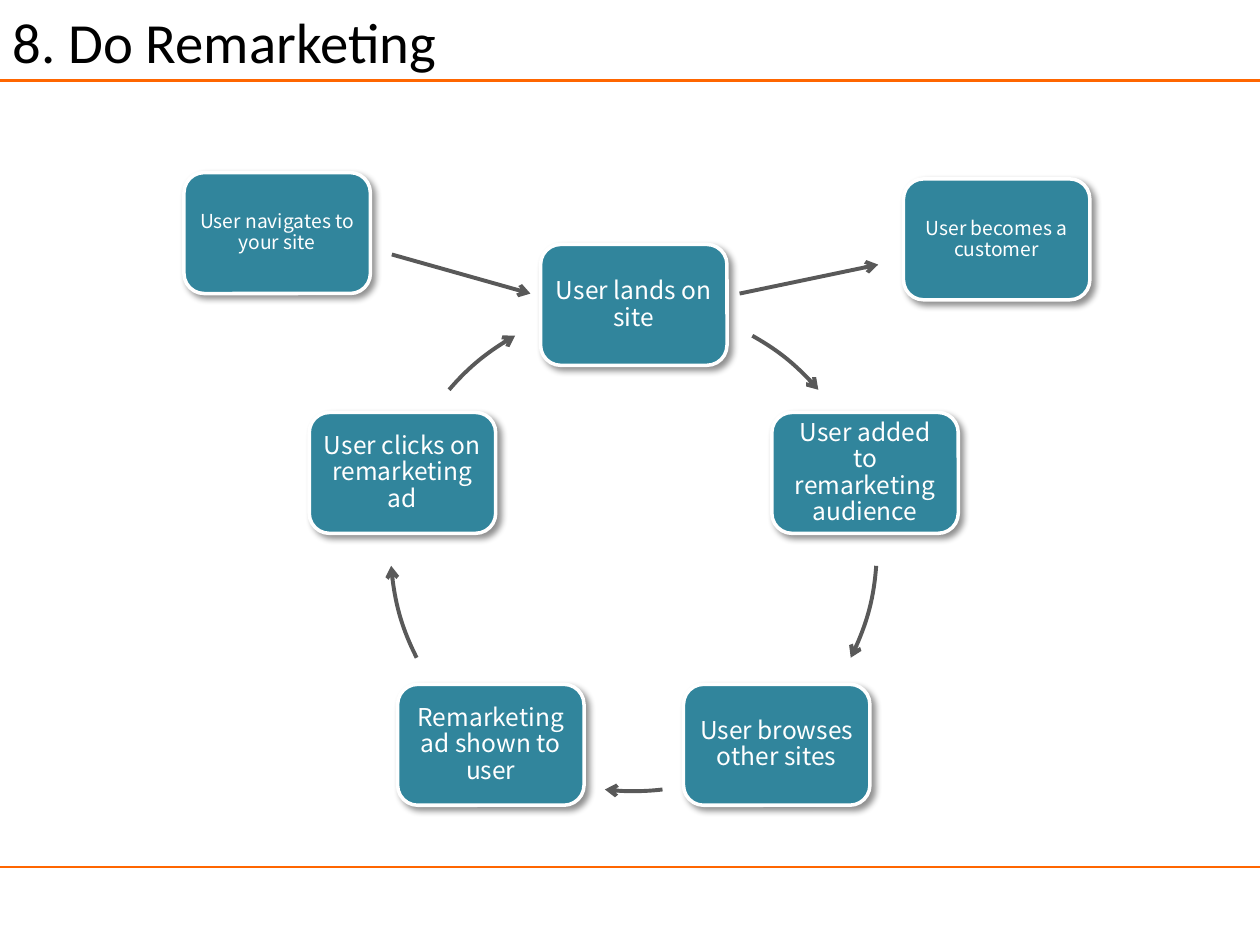
"""Build the remarketing cycle slide."""
from math import cos, radians, sin

from lxml import etree
from pptx import Presentation
from pptx.dml.color import RGBColor
from pptx.enum.shapes import MSO_CONNECTOR, MSO_SHAPE
from pptx.enum.text import MSO_ANCHOR, PP_ALIGN
from pptx.oxml.ns import qn
from pptx.util import Inches, Pt

ROUNDED, ARC = MSO_SHAPE.ROUNDED_RECTANGLE, MSO_SHAPE.ARC
STRAIGHT = MSO_CONNECTOR.STRAIGHT
CENTER, LEFT = PP_ALIGN.CENTER, PP_ALIGN.LEFT
MIDDLE = MSO_ANCHOR.MIDDLE

TITLE = "8. Do Remarketing"
CYCLE = [
    "User lands on site",
    "User added to remarketing audience",
    "User browses other sites",
    "Remarketing ad shown to user",
    "User clicks on remarketing ad",
]
ENDS = [
    ("User navigates to your site", 2.2, 1.85),
    ("User becomes a customer", 7.91, 1.9),
]
ARC_ANGLES = [(299.2, 319.4), (4.2, 26.8), (83.2, 96.8), (153.2, 175.8), (220.6, 240.8)]
ARROWS = [(3.11, 2.02, 4.21, 2.33), (5.87, 2.33, 6.97, 2.1)]
RULES = [0.64, 6.88]

CENTER_X, CENTER_Y, RADIUS = 5.03, 4.35, 1.93
BOX_WIDTH, BOX_HEIGHT = 1.48, 0.96

THEME = {
    "box": RGBColor.from_string("31859C"),
    "white": RGBColor.from_string("FFFFFF"),
    "arrow": RGBColor.from_string("595959"),
    "rule": RGBColor.from_string("FF6600"),
    "title": RGBColor.from_string("000000"),
    "title_font": "Calibri",
    "box_font": "Noto Sans CJK KR",
    "title_size": 32.4,
    "cycle_size": 14,
    "end_size": 11,
}


def style_run(paragraph, font_name, size, color):
    font = paragraph.runs[0].font
    font.name, font.size = font_name, Pt(size)
    font.color.rgb = color


def add_shadow(shape):
    shape.shadow.inherit = False
    effects = shape._element.spPr.find(qn("a:effectLst"))
    shadow = etree.SubElement(
        effects, qn("a:outerShdw"), blurRad=str(Pt(4)), dist=str(Pt(3)),
        dir=str(45 * 60000), algn="ctr", rotWithShape="0")
    color = etree.SubElement(shadow, qn("a:srgbClr"), val="000000")
    etree.SubElement(color, qn("a:alpha"), val="43000")


def style_line(shape, color, width, arrow=False):
    shape.line.color.rgb = color
    shape.line.width = Pt(width)
    if arrow:
        outline = shape._element.spPr.find(qn("a:ln"))
        etree.SubElement(outline, qn("a:tailEnd"), type="arrow")


def add_box(slide, text, center_x, center_y, size, inset):
    box = slide.shapes.add_shape(
        ROUNDED, Inches(center_x - BOX_WIDTH / 2), Inches(center_y - BOX_HEIGHT / 2),
        Inches(BOX_WIDTH), Inches(BOX_HEIGHT))
    box.fill.solid()
    box.fill.fore_color.rgb = THEME["box"]
    style_line(box, THEME["white"], 2)
    add_shadow(box)
    frame = box.text_frame
    frame.text = text
    frame.word_wrap = True
    frame.vertical_anchor = MIDDLE
    frame.margin_left = frame.margin_right = Inches(inset)
    frame.margin_top = frame.margin_bottom = Inches(inset)
    paragraph = frame.paragraphs[0]
    paragraph.alignment, paragraph.line_spacing = CENTER, 0.9
    style_run(paragraph, THEME["box_font"], size, THEME["white"])


def add_arc(slide, start, end):
    arc = slide.shapes.add_shape(
        ARC, Inches(CENTER_X - RADIUS), Inches(CENTER_Y - RADIUS),
        Inches(2 * RADIUS), Inches(2 * RADIUS))
    arc.adjustments[0], arc.adjustments[1] = start * 0.6, end * 0.6
    arc.fill.background()
    style_line(arc, THEME["arrow"], 2.25, arrow=True)
    arc.shadow.inherit = False


def add_line(slide, ends, color, width, arrow=False):
    line = slide.shapes.add_connector(STRAIGHT, *[Inches(value) for value in ends])
    style_line(line, color, width, arrow)
    etree.SubElement(line._element.spPr, qn("a:effectLst"))


def add_title(slide):
    title = slide.shapes.title
    title.left, title.top = Inches(0), Inches(0)
    title.width, title.height = Inches(6.42), Inches(0.64)
    frame = title.text_frame
    frame.text = TITLE
    frame.vertical_anchor = MIDDLE
    frame.paragraphs[0].alignment = LEFT
    style_run(frame.paragraphs[0], THEME["title_font"], THEME["title_size"], THEME["title"])


def main():
    presentation = Presentation()
    presentation.slide_width, presentation.slide_height = Inches(10), Inches(7.5)
    slide = presentation.slides.add_slide(presentation.slide_layouts[5])
    add_title(slide)
    for height in RULES:
        add_line(slide, (0, height, 10, height), THEME["rule"], 1.5)
    for index, (text, angles) in enumerate(zip(CYCLE, ARC_ANGLES)):
        angle = radians(index * 360 / len(CYCLE) - 90)
        add_box(slide, text, CENTER_X + RADIUS * cos(angle),
                CENTER_Y + RADIUS * sin(angle), THEME["cycle_size"], 0.06)
        add_arc(slide, *angles)
    for ends in ARROWS:
        add_line(slide, ends, THEME["arrow"], 2.25, arrow=True)
    for text, center_x, center_y in ENDS:
        add_box(slide, text, center_x, center_y, THEME["end_size"], 0.05)
    presentation.save("out.pptx")


if __name__ == "__main__":
    main()
